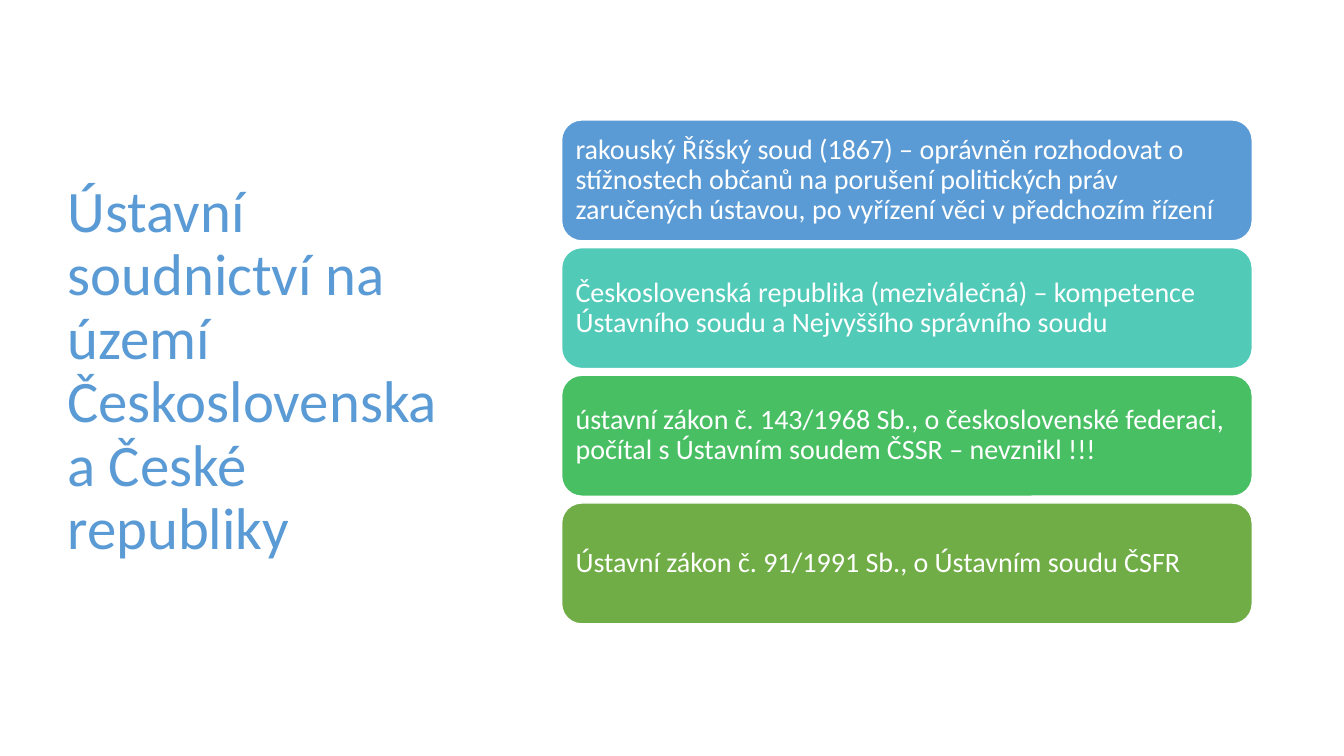
from pptx import Presentation
from pptx.dml.color import RGBColor
from pptx.enum.shapes import MSO_SHAPE as Preset
from pptx.enum.text import MSO_ANCHOR as Anchor, PP_ALIGN as Align
from pptx.util import Pt

PX = 9144  # EMU in one px, 100 px to the inch
SLIDE_SIZE = (1333, 750)
TITLE_BOX = (57, 68, 416, 602)
CARDS_BOX = (557, 119, 685, 500)
CARD_HEIGHT = 120

BLUE, WHITE = "5B9BD5", "FFFFFF"
TITLE = "Ústavní soudnictví na území Československa a České republiky"
CARDS = [
    (BLUE, "rakouský Říšský soud (1867) – oprávněn rozhodovat o stížnostech občanů "
           "na porušení politických práv zaručených ústavou, po vyřízení věci "
           "v předchozím řízení"),
    ("52CAB8", "Československá republika (meziválečná) – kompetence Ústavního soudu "
               "a Nejvyššího správního soudu"),
    ("49BF64", "ústavní zákon č. 143/1968 Sb., o československé federaci, počítal "
               "s Ústavním soudem ČSSR – nevznikl !!!"),
    ("70AD47", "Ústavní zákon č. 91/1991 Sb., o Ústavním soudu ČSFR"),
]


def px(*lengths):
    return [round(length * PX) for length in lengths]


def color(hex_code):
    return RGBColor.from_string(hex_code)


def set_attributes(target, values):
    for name, value in values.items():
        setattr(target, name, value)


def write_text(shape, text, size, hex_code, inset_x, inset_y):
    side, edge = px(inset_x, inset_y)
    frame = shape.text_frame
    set_attributes(frame, {
        "word_wrap": True, "vertical_anchor": Anchor.MIDDLE,
        "margin_left": side, "margin_right": side,
        "margin_top": edge, "margin_bottom": edge,
    })
    paragraph = frame.paragraphs[0]
    set_attributes(paragraph, {"text": text, "alignment": Align.LEFT, "line_spacing": 0.9})
    font = paragraph.runs[0].font
    set_attributes(font, {"name": "Calibri", "size": Pt(size)})
    font.color.rgb = color(hex_code)


def add_title(slide, box):
    shape = slide.shapes.add_textbox(*px(*box))
    write_text(shape, TITLE, 42, BLUE, 10, 5)


def add_cards(slide, box):
    left, top, width, height = box
    # Cards spread evenly from the top to the bottom of the box
    step = (height - CARD_HEIGHT) / (len(CARDS) - 1)
    for index, (fill, text) in enumerate(CARDS):
        card = slide.shapes.add_shape(
            Preset.ROUNDED_RECTANGLE, *px(left, top + index * step, width, CARD_HEIGHT))
        card.shadow.inherit = False
        card.fill.solid()
        card.fill.fore_color.rgb = color(fill)
        card.line.color.rgb = color(WHITE)
        card.line.width = Pt(1)
        write_text(card, text, 20, WHITE, 8, 8)


def main():
    presentation = Presentation()
    presentation.slide_width, presentation.slide_height = px(*SLIDE_SIZE)
    slide = presentation.slides.add_slide(presentation.slide_layouts[6])
    # Heading on the left, stack of cards on the right
    add_title(slide, TITLE_BOX)
    add_cards(slide, CARDS_BOX)
    presentation.save("out.pptx")


if __name__ == "__main__":
    main()
